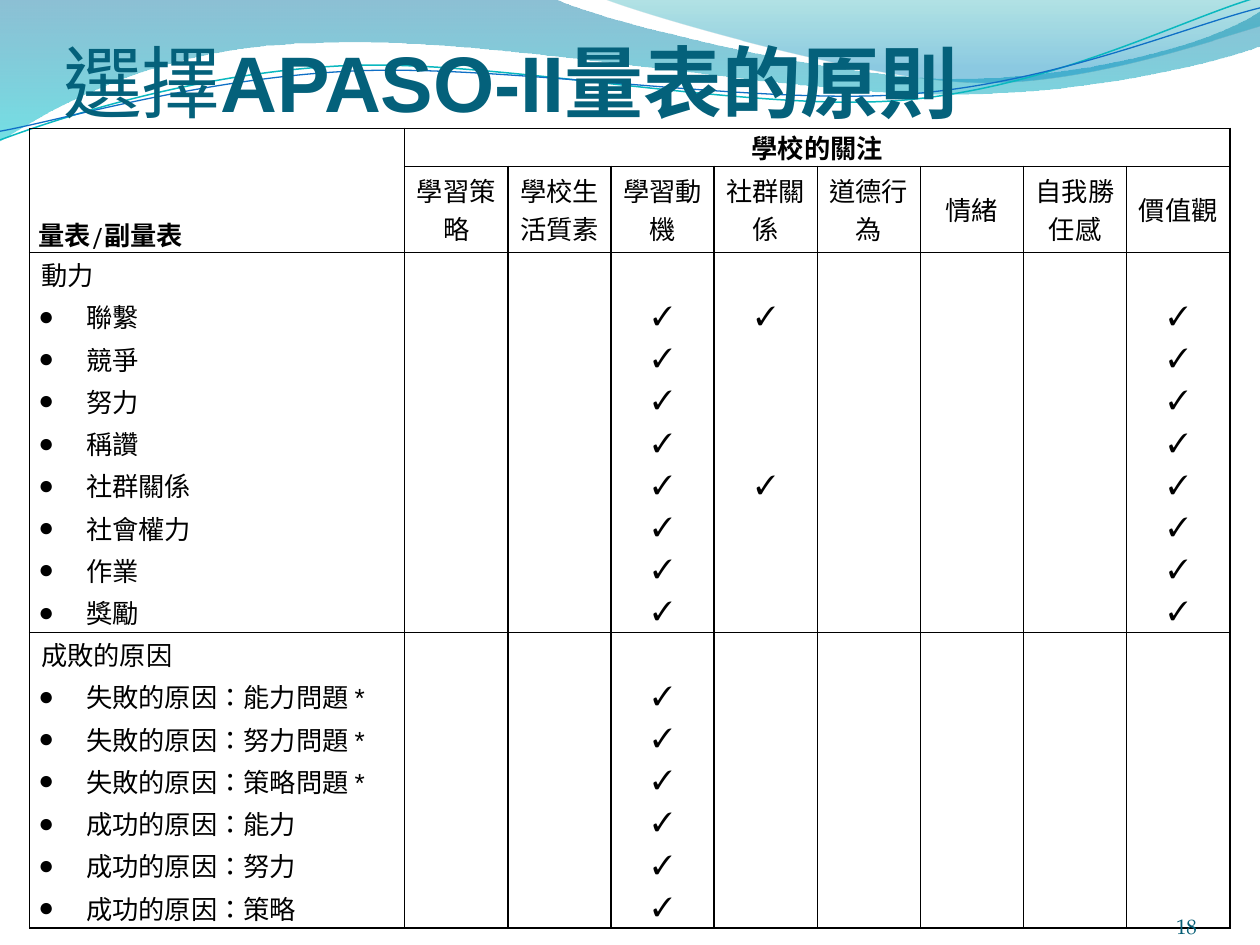
from dataclasses import dataclass
from math import cos, radians, sin

from lxml import etree
from pptx import Presentation
from pptx.dml.color import RGBColor
from pptx.enum.text import MSO_ANCHOR, MSO_AUTO_SIZE, PP_ALIGN
from pptx.oxml.ns import qn
from pptx.util import Pt

LEFT, CENTER, RIGHT, JUSTIFY = PP_ALIGN.LEFT, PP_ALIGN.CENTER, PP_ALIGN.RIGHT, PP_ALIGN.JUSTIFY
TOP, MIDDLE, BOTTOM = MSO_ANCHOR.TOP, MSO_ANCHOR.MIDDLE, MSO_ANCHOR.BOTTOM
NO_GRID = "{2D5ABB26-0587-4C30-8999-92F81FD0307C}"


@dataclass(frozen=True)
class Theme:
    """Colours, fonts and type sizes of the slide."""
    title: str = "04617B"
    number: str = "045D75"
    ink: str = "000000"
    wave_left: tuple = ((0, "0074A1", 45), (100, "00C6CF", 55))
    wave_right: tuple = ((0, "00A1A9", 30), (80, "008BBF", 45))
    line_teal: str = "0AB8BF"
    line_blue: str = "0F6FC6"
    sans: str = "Arial"
    serif: str = "Times New Roman"
    book: str = "TeX Gyre Pagella"
    title_size: float = 45
    body_size: float = 15
    number_size: float = 12


T = Theme()
CONCERNS = ["學習策略", "學校生活質素", "學習動機", "社群關係",
            "道德行為", "情緒", "自我勝任感", "價值觀"]
MOTIVE, SOCIAL, VALUES = 3, 4, 8
SECTIONS = [
    ("動力", T.serif, [
        ("聯繫", (MOTIVE, SOCIAL, VALUES)),
        ("競爭", (MOTIVE, VALUES)),
        ("努力", (MOTIVE, VALUES)),
        ("稱讚", (MOTIVE, VALUES)),
        ("社群關係", (MOTIVE, SOCIAL, VALUES)),
        ("社會權力", (MOTIVE, VALUES)),
        ("作業", (MOTIVE, VALUES)),
        ("獎勵", (MOTIVE, VALUES))]),
    ("成敗的原因", T.sans, [
        (text, (MOTIVE,)) for text in (
            "失敗的原因：能力問題 *", "失敗的原因：努力問題 *", "失敗的原因：策略問題 *",
            "成功的原因：能力", "成功的原因：努力", "成功的原因：策略")]),
]
WAVES = [
    ([[(0, -0.7)], [(317, -0.7)],
      [(343, 12), (478, 45), (546, 45)], [(614, 45), (690, 27), (720, 6.5)],
      [(721, 26)],
      [(708, 32), (626, 55), (537, 54)], [(448, 54), (275, 20), (185, 24.5)],
      [(93, 25), (33, 60), (-0.7, 81)], [(0, -0.7)]], T.wave_left),
    ([[(345, -0.7)],
      [(366, 8), (491, 45), (554, 47)], [(616, 50), (692, 23), (720, 15)],
      [(720, 0)], [(345, -0.7)]], T.wave_right),
]
LINES = [
    ([[(0, 80)], [(35, 67), (114, 41), (199, 37.5)],
      [(284, 34), (427, 64), (513, 57.5)], [(600, 51), (675, 11), (718.5, -1.5)]],
     (359.3, 41.4), T.line_teal, 0.85),
    ([[(0, 75)], [(34, 69), (118, 44), (204, 40.5)],
      [(290, 37), (430, 60), (516, 54)], [(602, 48), (677.5, 15), (720, 4.5)]],
     (359.6, 42.5), T.line_blue, 0.75),
]
TILT = 2.7


def add_text(p, text, font=T.serif, size=T.body_size, color=T.ink, bold=False, align=LEFT):
    """Add one formatted run to a paragraph."""
    p.alignment = align
    r = p.add_run()
    r.text = text
    r.font.name, r.font.size, r.font.bold = font, Pt(size), bold
    r.font.color.rgb = RGBColor.from_string(color)
    r._r.get_or_add_rPr().set("lang", "zh-TW")


def set_frame(tf, anchor, top=0):
    """Set the insets, anchor and wrapping of a text frame."""
    tf.margin_left = tf.margin_right = tf.margin_bottom = 0
    tf.margin_top = Pt(top)
    tf.word_wrap, tf.auto_size, tf.vertical_anchor = True, MSO_AUTO_SIZE.NONE, anchor


def add_color(parent, color, alpha=100):
    """Add a colour element with its opacity in percent."""
    clr = etree.SubElement(parent, qn("a:srgbClr"), val=color)
    if alpha < 100:
        etree.SubElement(clr, qn("a:alpha"), val=str(alpha * 1000))


def sample(segments, steps=24):
    """Return points along the outline, to measure its bounds."""
    points = list(segments[0])
    for seg in segments[1:]:
        if len(seg) == 1:
            points += seg
            continue
        ctrl = [points[-1], *seg]
        for t in (i / steps for i in range(1, steps + 1)):
            weights = ((1 - t) ** 3, 3 * t * (1 - t) ** 2, 3 * t * t * (1 - t), t ** 3)
            points.append(tuple(sum(k * v for k, v in zip(weights, axis)) for axis in zip(*ctrl)))
    return points


def add_curve(s, x, y, segments, close=False):
    """Draw an outline of straight and Bézier segments shifted by x and y."""
    points = [(Pt(x + px), Pt(y + py)) for px, py in sample(segments)]
    fb = s.shapes.build_freeform(*points[0])
    fb.add_line_segments(points[1:], close=close)
    sp = fb.convert_to_shape()
    sp.shadow.inherit = False
    outline = next(sp._element.iter(qn("a:path")))
    for child in list(outline):
        outline.remove(child)
    for i, seg in enumerate(segments):
        tag = "a:moveTo" if i == 0 else "a:lnTo" if len(seg) == 1 else "a:cubicBezTo"
        node = etree.SubElement(outline, qn(tag))
        for px, py in seg:
            etree.SubElement(node, qn("a:pt"), x=str(Pt(x + px) - sp.left), y=str(Pt(y + py) - sp.top))
    if close:
        etree.SubElement(outline, qn("a:close"))
    return sp


def turn(point, center, degrees):
    """Turn a point clockwise about a centre."""
    a, dx, dy = radians(degrees), point[0] - center[0], point[1] - center[1]
    return center[0] + dx * cos(a) - dy * sin(a), center[1] + dx * sin(a) + dy * cos(a)


def add_waves(s, x, y):
    """Draw the gradient waves and thin lines across the top."""
    for segments, stops in WAVES:
        sp = add_curve(s, x, y, segments, close=True)
        sp.line.fill.background()
        grad = etree.Element(qn("a:gradFill"), rotWithShape="1")
        gs_list = etree.SubElement(grad, qn("a:gsLst"))
        for pos, color, alpha in stops:
            add_color(etree.SubElement(gs_list, qn("a:gs"), pos=str(pos * 1000)), color, alpha)
        etree.SubElement(grad, qn("a:lin"), ang="5400000", scaled="1")
        sp._element.spPr.find(qn("a:custGeom")).addnext(grad)
    for segments, center, color, width in LINES:
        level = [[turn(point, center, TILT) for point in seg] for seg in segments]
        sp = add_curve(s, x, y, level)
        sp.rotation = 360 - TILT
        sp.fill.background()
        sp.line.color.rgb = RGBColor.from_string(color)
        sp.line.width = Pt(width)


def add_title(s, x, y, w, h):
    """Place the title placeholder above the waves."""
    sp = s.shapes.title
    s.shapes._spTree.append(sp._element)
    sp.left, sp.top, sp.width, sp.height = Pt(x), Pt(y), Pt(w), Pt(h)
    set_frame(sp.text_frame, BOTTOM, top=3.6)
    p = sp.text_frame.paragraphs[0]
    add_text(p, "選擇", T.sans, T.title_size, T.title)
    add_text(p, "APASO-II量表的原則", T.sans, T.title_size, T.title, bold=True)


def set_cell(cell, edges, anchor=MIDDLE, top=0):
    """Set the insets, anchor, empty fill and borders of a cell."""
    cell.margin_left = cell.margin_right = Pt(5)
    cell.margin_top, cell.margin_bottom = Pt(top), 0
    cell.vertical_anchor = anchor
    cell.fill.background()
    tcPr = cell._tc.get_or_add_tcPr()
    for i, side in enumerate("LRTB"):
        ln = etree.Element(qn(f"a:ln{side}"), w=str(Pt(1)))
        if side in edges:
            add_color(etree.SubElement(ln, qn("a:solidFill")), T.ink)
        else:
            etree.SubElement(ln, qn("a:noFill"))
        tcPr.insert(i, ln)


def set_indent(p, left, first, bullet=None):
    """Set the hanging indent and bullet of a paragraph."""
    pPr = p._p.get_or_add_pPr()
    pPr.set("marL", str(Pt(left)))
    pPr.set("indent", str(Pt(first)))
    if bullet:
        etree.SubElement(pPr, qn("a:buFont"), typeface=T.sans)
        etree.SubElement(pPr, qn("a:buChar"), char=bullet)


def fill_header(tbl):
    """Fill the two merged header rows."""
    n = len(tbl.columns)
    for row in range(2):
        for col in range(n):
            set_cell(tbl.cell(row, col), "LRTB", BOTTOM if col == 0 else MIDDLE if row else TOP)
    tbl.cell(0, 0).merge(tbl.cell(1, 0))
    tbl.cell(0, 1).merge(tbl.cell(0, n - 1))
    for col, text, align in ((0, "量表/副量表", JUSTIFY), (1, "學校的關注", CENTER)):
        add_text(tbl.cell(0, col).text_frame.paragraphs[0], text, T.book, bold=True, align=align)
    for col, text in enumerate(CONCERNS, 1):
        add_text(tbl.cell(1, col).text_frame.paragraphs[0], text, align=CENTER)


def fill_section(tbl, start, heading, font, items):
    """Fill one section from its start row and return the next row."""
    rows = [(heading, ())] + items
    for i, (text, checks) in enumerate(rows):
        edges = "LR" + "T" * (i == 0) + "B" * (i == len(rows) - 1)
        for col in range(len(tbl.columns)):
            cell = tbl.cell(start + i, col)
            set_cell(cell, edges, top=0.7)
            p = cell.text_frame.paragraphs[0]
            if col == 0:
                add_text(p, text, font if i else T.serif)
                set_indent(p, *((27.4, -27.4, "●") if i else (16, -14.4)))
            elif col in checks:
                add_text(p, "✓", align=CENTER)
    return start + len(rows)


def add_matrix(s, x, y, w, h):
    """Build the table of scales against school concerns."""
    heads, first_col = (21.7, 49.3), 214.4
    body_rows = sum(1 + len(items) for _, _, items in SECTIONS)
    gf = s.shapes.add_table(2 + body_rows, 1 + len(CONCERNS), Pt(x), Pt(y), Pt(w), Pt(h))
    tbl = gf.table
    tbl.first_row = tbl.horz_banding = False
    tbl._tbl.tblPr.find(qn("a:tableStyleId")).text = NO_GRID
    for i, col in enumerate(tbl.columns):
        col.width = Pt((w - first_col) / len(CONCERNS) if i else first_col)
    for i, row in enumerate(tbl.rows):
        row.height = Pt(heads[i] if i < 2 else (h - sum(heads)) / body_rows)
    fill_header(tbl)
    row = 2
    for section in SECTIONS:
        row = fill_section(tbl, row, *section)


def add_number(s, x, y, w, h):
    """Place the page number."""
    tf = s.shapes.add_textbox(Pt(x), Pt(y), Pt(w), Pt(h)).text_frame
    set_frame(tf, BOTTOM)
    add_text(tf.paragraphs[0], "18", T.book, T.number_size, T.number, align=RIGHT)


def main():
    """Build and save the slide."""
    prs = Presentation()
    prs.slide_width, prs.slide_height = Pt(720), Pt(540)
    s = prs.slides.add_slide(prs.slide_layouts[5])
    add_waves(s, 0, 0)
    add_title(s, 36, 11.5, 648, 62)
    add_matrix(s, 16.9, 73.3, 686, 457)
    add_number(s, 624, 507.6, 60, 28.8)
    prs.save("out.pptx")


if __name__ == "__main__":
    main()
